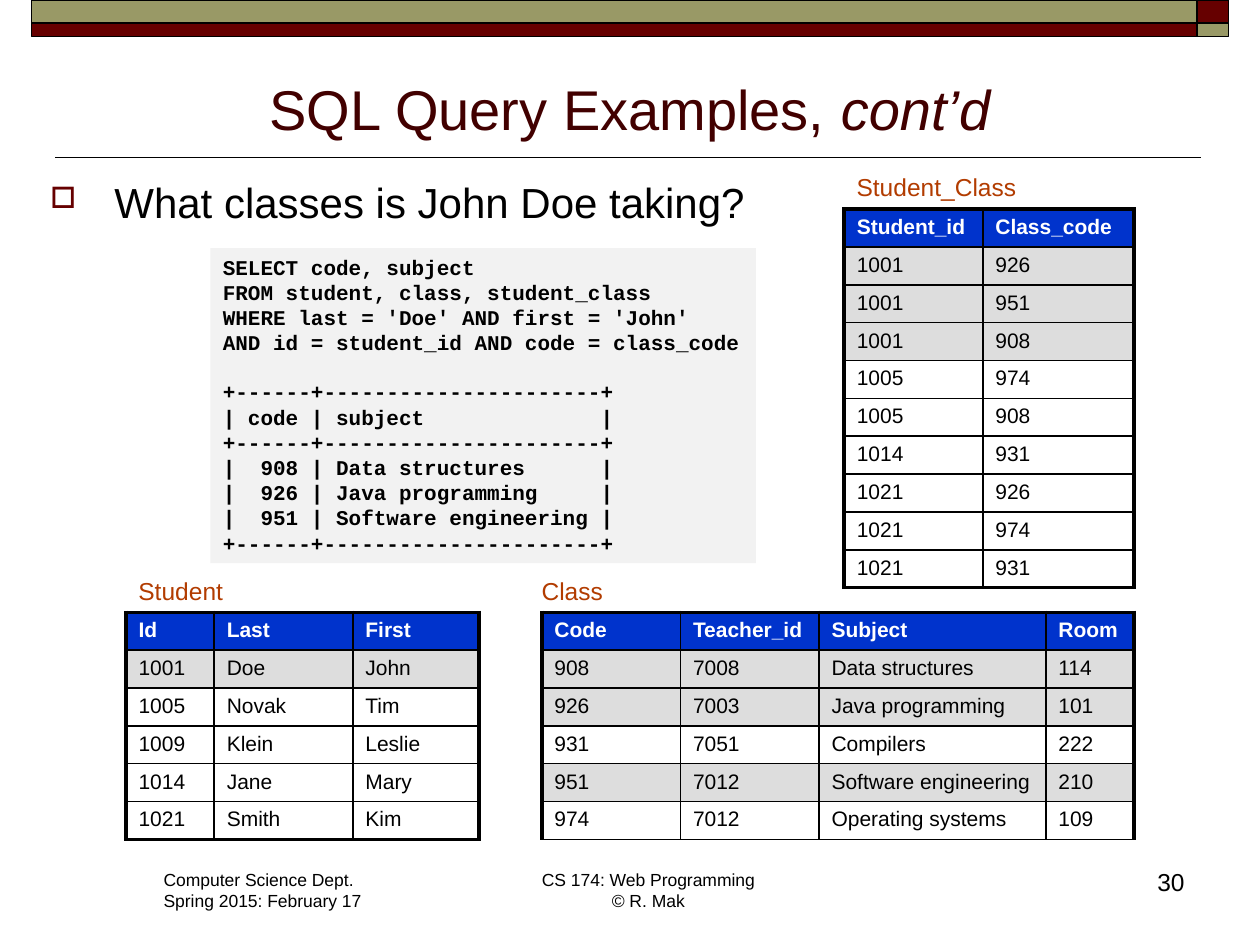
from lxml import etree
from pptx import Presentation, util as u
from pptx.dml.color import RGBColor
from pptx.enum import shapes, text
from pptx.oxml import ns

BLACK = RGBColor(0, 0, 0)
WHITE = RGBColor(255, 255, 255)
MAROON = RGBColor(0x66, 0, 0)
OLIVE = RGBColor(0x99, 0x99, 0x66)
WINE = RGBColor(0x42, 0, 0)
RUST = RGBColor(0xB2, 0x3C, 0)
BLUE = RGBColor(0, 0x33, 0xCC)
GRAY = RGBColor(0xDD, 0xDD, 0xDD)
PALE = RGBColor(0xF2, 0xF2, 0xF2)
LEFT, MID, RIGHT = text.PP_ALIGN.LEFT, text.PP_ALIGN.CENTER, text.PP_ALIGN.RIGHT


def node(parent, tag, **attrs):
    return etree.SubElement(parent, ns.qn(tag), attrs)


def write(frame, words, size=12, color=BLACK, font="Arial", bold=False,
          align=LEFT, tail=""):
    """Write one paragraph per line; tail is an italic ending."""
    for i, line in enumerate(words.split("\n")):
        para = frame.paragraphs[0] if i == 0 else frame.add_paragraph()
        para.text = line
        para.alignment = align
        if tail:
            para.add_run().text = tail
            para.runs[-1].font.italic = True
        for run in para.runs:
            face = run.font
            face.name, face.size, face.bold = font, u.Pt(size), bold
            face.color.rgb = color


class Deck:
    def __init__(self, wide, high):
        self.prs = Presentation()
        self.prs.slide_width, self.prs.slide_height = u.Inches(wide), u.Inches(high)
        self.slide = self.prs.slides.add_slide(self.prs.slide_layouts[6])
        self.items = self.slide.shapes

    def rule(self, x1, y1, x2, y2):
        line = self.items.add_connector(
            shapes.MSO_CONNECTOR.STRAIGHT, *map(u.Inches, (x1, y1, x2, y2)))
        line.line.color.rgb, line.line.width = BLACK, u.Pt(1)
        node(line._element.spPr, "a:effectLst")

    def rect(self, box, fill, edge=True):
        shape = self.items.add_shape(
            shapes.MSO_SHAPE.RECTANGLE, *map(u.Inches, box))
        shape.shadow.inherit = False
        shape.fill.solid()
        shape.fill.fore_color.rgb = fill
        if edge:
            shape.line.color.rgb, shape.line.width = BLACK, u.Pt(1)
        else:
            shape.line.fill.background()
        return shape

    def label(self, box, words, wrap=False, anchor=text.MSO_ANCHOR.TOP, **style):
        frame = self.items.add_textbox(*map(u.Inches, box)).text_frame
        frame.word_wrap, frame.vertical_anchor = wrap, anchor
        write(frame, words, **style)
        return frame

    def bullet(self, box, words, **style):
        para = self.label(box, words, wrap=True, **style).paragraphs[0]
        props = para._p.get_or_add_pPr()
        props.set("marL", str(u.Inches(0.51)))
        props.set("indent", str(-u.Inches(0.51)))
        node(node(props, "a:buClr"), "a:srgbClr", val=str(MAROON))
        node(props, "a:buSzPct", val="70000")
        node(props, "a:buChar", char="□")

    def code(self, box, query, result):
        shape = self.rect(box, PALE, edge=False)
        frame = shape.text_frame
        frame.word_wrap, frame.vertical_anchor = False, text.MSO_ANCHOR.TOP
        write(frame, query + "\n" + result, font="Courier New", bold=True)
        # One line of space between query and result
        frame.paragraphs[query.count("\n") + 1].space_before = u.Pt(13.6)

    def border(self, cell, **widths):
        props = cell._tc.get_or_add_tcPr()
        for side, width in widths.items():
            line = node(props, "a:ln" + side, w=str(u.Pt(width)))
            node(node(line, "a:solidFill"), "a:srgbClr", val=str(BLACK))

    def table(self, box, widths, rows, marked, tall, base=2.25):
        """marked: shaded rows; tall: taller rows; base: bottom border width."""
        shape = self.items.add_table(len(rows), len(widths), *map(u.Inches, box))
        grid = shape.table
        grid.horz_banding = False
        for col, width in zip(grid.columns, widths):
            col.width = u.Inches(width)
        for r, row in enumerate(rows):
            grid.rows[r].height = u.Inches(0.3 if r in tall else 0.27)
            for c, words in enumerate(row):
                cell = grid.cell(r, c)
                self.border(cell, L=1 if c else 2.25,
                            R=2.25 if c == len(row) - 1 else 1,
                            T=1 if r else 2.25,
                            B=base if r == len(rows) - 1 else 1)
                if r == 0 or r in marked:
                    cell.fill.solid()
                    cell.fill.fore_color.rgb = GRAY if r else BLUE
                else:
                    cell.fill.background()
                write(cell.text_frame, words, bold=r == 0,
                      color=BLACK if r else WHITE)
        shape.height = u.Inches(box[3])


def main():
    deck = Deck(10, 7.5)

    # Banner and title rule
    deck.rule(9.53, 1.25, 0.44, 1.25)
    for top, high, main_fill, end_fill in ((0, 0.18, OLIVE, MAROON),
                                           (0.18, 0.11, MAROON, OLIVE)):
        deck.rect((0.25, top, 9.25, high), main_fill)
        deck.rect((9.5, top, 0.25, high), end_fill)

    # Footer
    deck.label((1.2, 6.85, 1.79, 0.44),
               "Computer Science Dept.\nSpring 2015: February 17", size=10)
    deck.label((4.19, 6.85, 1.91, 0.44),
               "CS 174: Web Programming\v© R. Mak", size=10, align=MID)
    deck.label((7.42, 6.83, 2.08, 0.5), "30", wrap=True, size=14, align=RIGHT)

    # Title and question
    deck.label((0.5, 0.45, 9, 0.72), "SQL Query Examples, ", tail="cont’d",
               wrap=True, anchor=text.MSO_ANCHOR.BOTTOM, size=32, color=WINE,
               align=MID)
    deck.bullet((0.3, 1.35, 6.2, 0.53), "What classes is John Doe taking?", size=24)

    # Tables
    deck.table((1, 4.86, 2.8, 1.8), (0.7, 1.1, 1), (
        ("Id", "Last", "First"),
        ("1001", "Doe", "John"),
        ("1005", "Novak", "Tim"),
        ("1009", "Klein", "Leslie"),
        ("1014", "Jane", "Mary"),
        ("1021", "Smith", "Kim")), marked=(1,), tall=(4,))
    deck.table((4.3, 4.86, 4.7, 1.8), (1.1, 1.1, 1.8, 0.7), (
        ("Code", "Teacher_id", "Subject", "Room"),
        ("908", "7008", "Data structures", "114"),
        ("926", "7003", "Java programming", "101"),
        ("931", "7051", "Compilers", "222"),
        ("951", "7012", "Software engineering", "210"),
        ("974", "7012", "Operating systems", "109")),
        marked=(1, 2, 4), tall=(4,), base=1)
    deck.table((6.7, 1.66, 2.3, 3), (1.1, 1.2), (
        ("Student_id", "Class_code"),
        ("1001", "926"), ("1001", "951"), ("1001", "908"),
        ("1005", "974"), ("1005", "908"), ("1014", "931"),
        ("1021", "926"), ("1021", "974"), ("1021", "931")),
        marked=(1, 2, 3), tall=range(4, 9))

    # Query and its result
    deck.code((1.67, 1.97, 4.33, 2.5), """SELECT code, subject
FROM student, class, student_class
WHERE last = 'Doe' AND first = 'John'
AND id = student_id AND code = class_code""", """+------+----------------------+
| code | subject              |
+------+----------------------+
|  908 | Data structures      |
|  926 | Java programming     |
|  951 | Software engineering |
+------+----------------------+""")

    # Table names
    for name, left, top, wide in (("Class", 4.2, 4.52, 0.69),
                                  ("Student", 1, 4.52, 0.88),
                                  ("Student_Class", 6.7, 1.32, 1.48)):
        deck.label((left, top, wide, 0.34), name, size=14, color=RUST)

    deck.prs.save("out.pptx")


if __name__ == "__main__":
    main()
